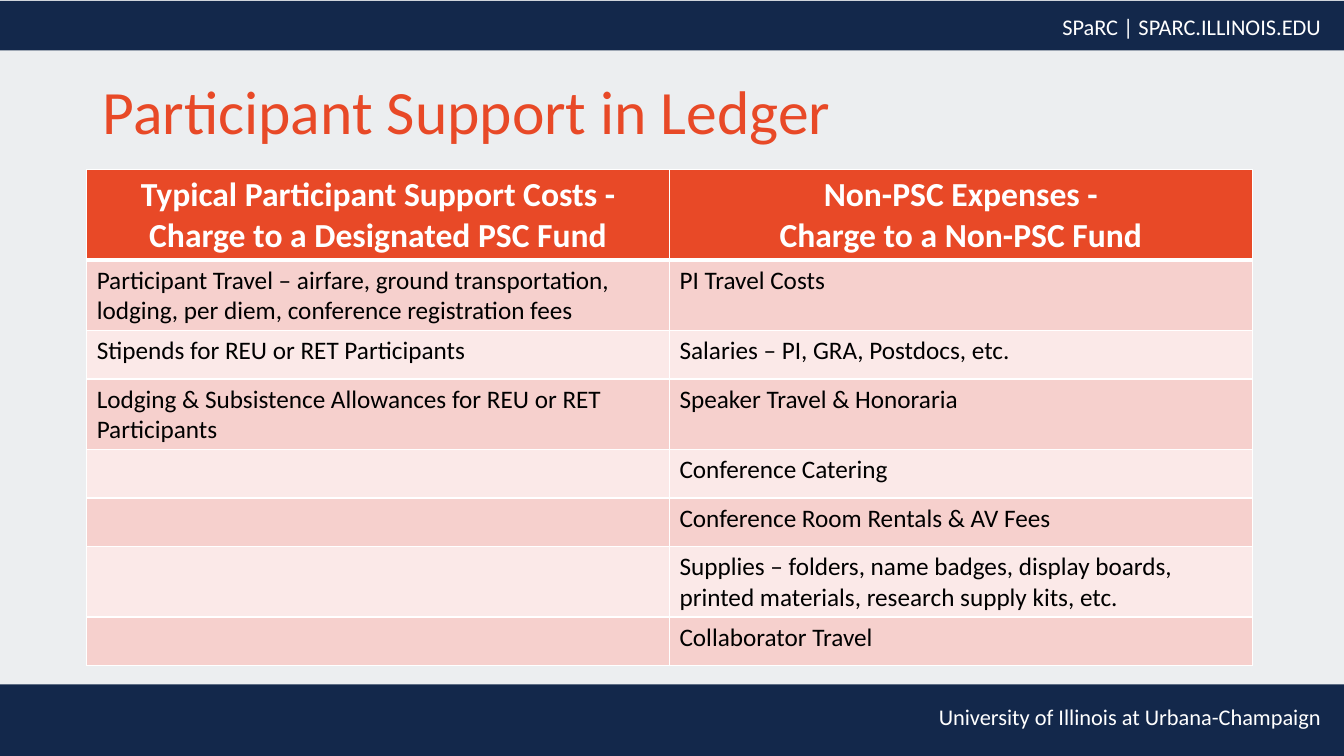
from dataclasses import dataclass

from lxml.etree import SubElement
from pptx import Presentation
from pptx.dml.color import RGBColor
from pptx.enum.shapes import MSO_SHAPE as SHAPE
from pptx.enum.text import MSO_ANCHOR as ANCHOR, PP_ALIGN as ALIGN
from pptx.oxml.ns import qn
from pptx.util import Inches, Pt


@dataclass(frozen=True)
class Theme:
    """Colours, font and type sizes of the slide."""
    font: str = "Calibri"
    backdrop: str = "ECEEF0"
    navy: str = "13284B"
    orange: str = "E84927"
    white: str = "FFFFFF"
    black: str = "000000"
    bands: tuple = ("F6D0CD", "FBE9E8")
    title: int = 44
    header: int = 24
    body: int = 18
    banner: int = 16


THEME = Theme()
WIDTH, HEIGHT = 13.33, 7.5
HEADERS = (
    "Typical Participant Support Costs - Charge to a Designated PSC Fund",
    "Non-PSC Expenses -\nCharge to a Non-PSC Fund",
)
EXPENSES = (
    ("Participant Travel – airfare, ground transportation, lodging, per diem, "
     "conference registration fees", "PI Travel Costs"),
    ("Stipends for REU or RET Participants", "Salaries – PI, GRA, Postdocs, etc."),
    ("Lodging & Subsistence Allowances for REU or RET Participants",
     "Speaker Travel & Honoraria"),
    ("", "Conference Catering"),
    ("", "Conference Room Rentals & AV Fees"),
    ("", "Supplies – folders, name badges, display boards, printed materials, "
     "research supply kits, etc."),
    ("", "Collaborator Travel"),
)
HEADER_HEIGHT, SINGLE, DOUBLE = 0.89, 0.48, 0.7
ONE_LINE = 60


def rgb(value):
    """Turn a hex string into a colour."""
    return RGBColor.from_string(value)


def write(tf, text, size, color, align=ALIGN.LEFT, bold=False):
    """Fill a text frame and format its paragraphs."""
    tf.text = text
    tf.word_wrap = True
    for p in tf.paragraphs:
        p.alignment = align
        p.font.size = Pt(size)
        for r in p.runs:
            r.font.name = THEME.font
            r.font.size = Pt(size)
            r.font.bold = bold
            r.font.color.rgb = rgb(color)


def add_text(s, box, text, size, color, align=ALIGN.LEFT):
    """Add a top-anchored text box and return its frame."""
    tf = s.shapes.add_textbox(*map(Inches, box)).text_frame
    tf.vertical_anchor = ANCHOR.TOP
    write(tf, text, size, color, align)
    return tf


def add_banner(s, box, text, text_top):
    """Add a navy band with right-aligned text inside it."""
    left, top, width, height = box
    sp = s.shapes.add_shape(SHAPE.RECTANGLE, *map(Inches, box))
    sp.shadow.inherit = False
    sp.fill.solid()
    sp.fill.fore_color.rgb = rgb(THEME.navy)
    sp.line.fill.background()
    add_text(s, (left + 5.65, top + text_top, width - 5.78, 0.37),
             text, THEME.banner, THEME.white, ALIGN.RIGHT)


def add_title(s, box, text):
    """Add the slide title."""
    tf = add_text(s, box, text, THEME.title, THEME.orange)
    tf.paragraphs[0].line_spacing = 0.9


def set_borders(cell, top, bottom):
    """Draw white borders around a cell."""
    tc_pr = cell._tc.get_or_add_tcPr()
    for side, width in (("L", 1), ("R", 1), ("T", top), ("B", bottom)):
        ln = SubElement(tc_pr, qn(f"a:ln{side}"), w=str(Pt(width)))
        fill = SubElement(ln, qn("a:solidFill"))
        SubElement(fill, qn("a:srgbClr"), val=THEME.white)


def style_cell(cell, text, row):
    """Write and colour one cell of the given row."""
    header = row == 0
    set_borders(cell, 3 if row == 1 else 1, 3 if header else 1)
    cell.fill.solid()
    cell.fill.fore_color.rgb = rgb(THEME.orange if header else THEME.bands[(row - 1) % 2])
    if header:
        write(cell.text_frame, text, THEME.header, THEME.white, ALIGN.CENTER, True)
    else:
        write(cell.text_frame, text, THEME.body, THEME.black)


def add_expense_table(s, box):
    """Add the two-column table of expenses."""
    rows = (HEADERS, *EXPENSES)
    table = s.shapes.add_table(len(rows), len(HEADERS), *map(Inches, box)).table
    for column in table.columns:
        column.width = Inches(box[2] / len(HEADERS))
    for i, texts in enumerate(rows):
        height = DOUBLE if max(map(len, texts)) >= ONE_LINE - 2 else SINGLE
        table.rows[i].height = Inches(height if i else HEADER_HEIGHT)
        for j, text in enumerate(texts):
            style_cell(table.cell(i, j), text, i)


def build_slide(prs):
    """Compose the slide from its regions."""
    s = prs.slides.add_slide(prs.slide_layouts[6])
    s.background.fill.solid()
    s.background.fill.fore_color.rgb = rgb(THEME.backdrop)
    add_banner(s, (0, 6.79, WIDTH, 0.71), "University of Illinois at Urbana-Champaign", 0.14)
    add_banner(s, (0, 0.01, WIDTH, 0.49), "SPaRC | SPARC.ILLINOIS.EDU", 0.07)
    add_title(s, (0.92, 0.76, 11.5, 1.08), "Participant Support in Ledger")
    add_expense_table(s, (0.86, 1.68, 11.56, 4.92))


def main():
    """Build and save the presentation."""
    prs = Presentation()
    prs.slide_width, prs.slide_height = Inches(WIDTH), Inches(HEIGHT)
    build_slide(prs)
    prs.save("out.pptx")


if __name__ == "__main__":
    main()
